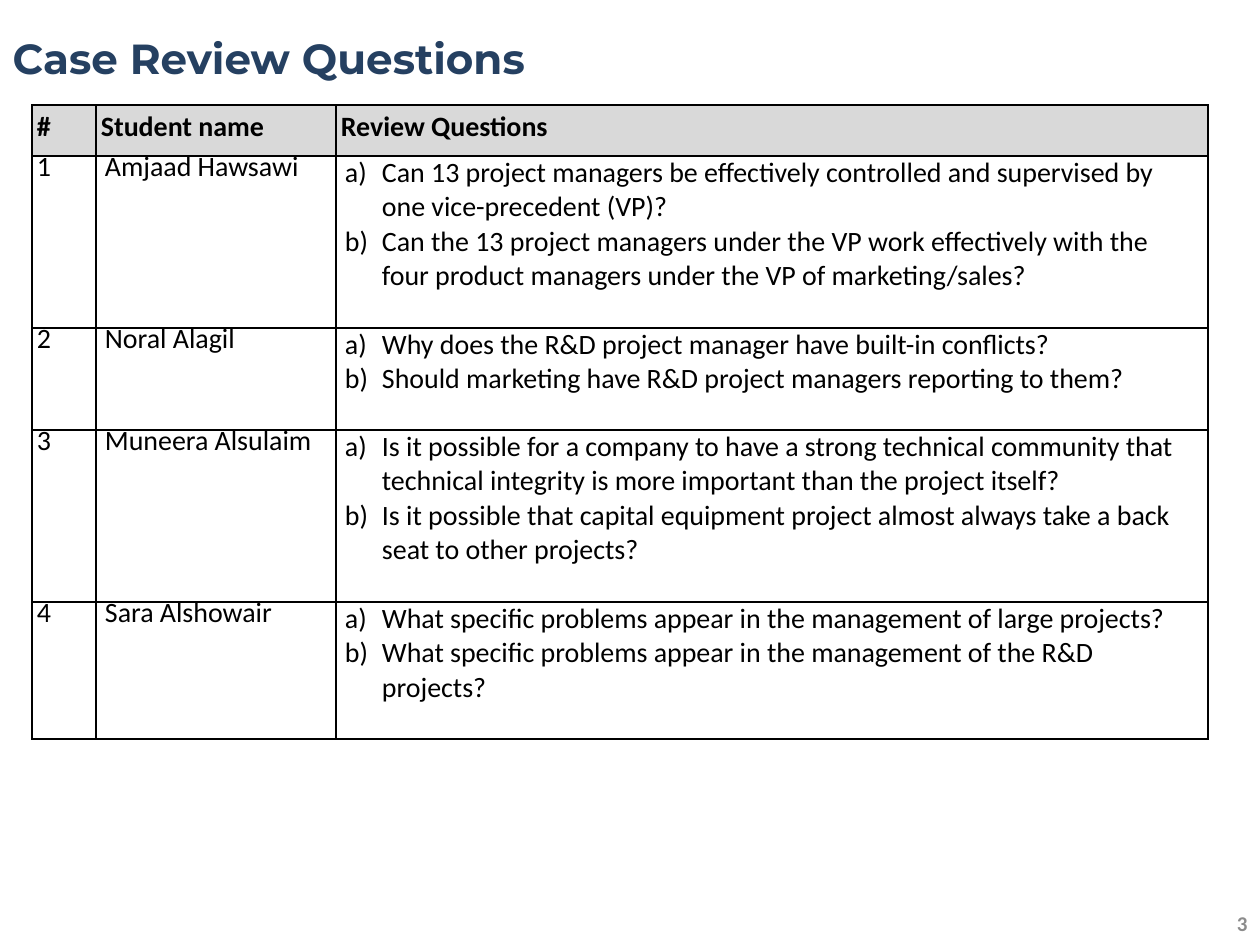
"""Build the case review questions slide with its table of students and questions."""
from lxml.etree import SubElement
from pptx import Presentation
from pptx.dml.color import RGBColor
from pptx.enum.text import MSO_ANCHOR, PP_ALIGN
from pptx.oxml.ns import qn
from pptx.util import Emu, Pt

TITLE = "Case Review Questions"
PAGE_NUMBER = "3"
HEADINGS = ("#", "Student name", "Review Questions")
REVIEWS = [
    ("Amjaad Hawsawi", [
        "Can 13 project managers be effectively controlled and supervised by one vice-precedent (VP)?",
        "Can the 13 project managers under the VP work effectively with the four product managers "
        "under the VP of marketing/sales?",
    ]),
    ("Noral Alagil", [
        "Why does the R&D project manager have built-in conflicts?",
        "Should marketing have R&D project managers reporting to them?",
    ]),
    ("Muneera Alsulaim", [
        "Is it possible for a company to have a strong technical community that technical integrity "
        "is more important than the project itself?",
        "Is it possible that capital equipment project almost always take a back seat to other projects?",
    ]),
    ("Sara Alshowair", [
        "What specific problems appear in the management of large projects?",
        "What specific problems appear in the management of the R&D projects?",
    ]),
]
COLUMN_WIDTHS = (64, 240, 872)
ROW_HEIGHTS = (51, 172, 102, 172, 137)
TABLE_LEFT, TABLE_TOP = 32, 105
NARROW_INSET, WIDE_INSET = 5, 9
QUESTION_INDENT = 37


def px(value):
    return Emu(round(value * 914400 / 126))


def color(value):
    return RGBColor.from_string(value)


def format_runs(paragraph, size, font, hex_color, bold):
    for run in paragraph.runs:
        run.font.size = Pt(size)
        run.font.name = font
        run.font.bold = bold
        run.font.color.rgb = color(hex_color)


def letter_paragraph(paragraph):
    properties = paragraph._p.get_or_add_pPr()
    properties.set("marL", str(px(QUESTION_INDENT)))
    properties.set("indent", str(-px(QUESTION_INDENT)))
    SubElement(properties, qn("a:buFont"), typeface="+mj-lt")
    SubElement(properties, qn("a:buAutoNum"), type="alphaLcParenR")


def draw_borders(cell):
    properties = cell._tc.get_or_add_tcPr()
    for index, side in enumerate(("a:lnL", "a:lnR", "a:lnT", "a:lnB")):
        line = properties.makeelement(qn(side), {"w": str(Pt(1))})
        fill = SubElement(line, qn("a:solidFill"))
        SubElement(fill, qn("a:srgbClr"), val="000000")
        properties.insert(index, line)


def fill_cell(cell, lines, inset, header=False, lettered=False):
    cell.margin_left = cell.margin_right = px(inset)
    cell.margin_top = cell.margin_bottom = 0
    cell.vertical_anchor = MSO_ANCHOR.MIDDLE if header else MSO_ANCHOR.TOP
    if header:
        cell.fill.solid()
        cell.fill.fore_color.rgb = color("D9D9D9")
    else:
        cell.fill.background()
    draw_borders(cell)
    cell.text_frame.text = "\n".join(lines)
    for paragraph in cell.text_frame.paragraphs:
        if lettered:
            letter_paragraph(paragraph)
        else:
            paragraph.line_spacing = Pt(16)
        format_runs(paragraph, 16, "Calibri", "000000", header)


def add_title(slide):
    title = slide.shapes.title
    title.left, title.top, title.width, title.height = px(0), px(0), px(1260), px(116)
    title.text_frame.text = TITLE
    title.text_frame.vertical_anchor = MSO_ANCHOR.MIDDLE
    paragraph = title.text_frame.paragraphs[0]
    paragraph.alignment = PP_ALIGN.LEFT
    format_runs(paragraph, 24, "Montserrat", "254061", True)


def add_page_number(slide):
    text_frame = slide.shapes.add_textbox(px(1207), px(901), px(53), px(44)).text_frame
    text_frame.word_wrap = True
    text_frame.vertical_anchor = MSO_ANCHOR.MIDDLE
    text_frame.text = PAGE_NUMBER
    paragraph = text_frame.paragraphs[0]
    paragraph.alignment = PP_ALIGN.RIGHT
    format_runs(paragraph, 12, "Calibri", "8C8C8C", True)


def add_review_table(slide):
    table = slide.shapes.add_table(
        len(ROW_HEIGHTS), len(COLUMN_WIDTHS), px(TABLE_LEFT), px(TABLE_TOP),
        px(sum(COLUMN_WIDTHS)), px(sum(ROW_HEIGHTS))).table
    table.horz_banding = False
    for column, width in zip(table.columns, COLUMN_WIDTHS):
        column.width = px(width)
    for row, height in zip(table.rows, ROW_HEIGHTS):
        row.height = px(height)
    for index, heading in enumerate(HEADINGS):
        fill_cell(table.cell(0, index), [heading], NARROW_INSET, header=True)
    for number, (student, questions) in enumerate(REVIEWS, 1):
        fill_cell(table.cell(number, 0), [str(number)], NARROW_INSET)
        fill_cell(table.cell(number, 1), [student], WIDE_INSET)
        fill_cell(table.cell(number, 2), questions, WIDE_INSET, lettered=True)


def main():
    presentation = Presentation()
    presentation.slide_width, presentation.slide_height = px(1260), px(945)
    slide = presentation.slides.add_slide(presentation.slide_layouts[5])
    add_title(slide)
    add_page_number(slide)
    add_review_table(slide)
    presentation.save("out.pptx")


if __name__ == "__main__":
    main()
